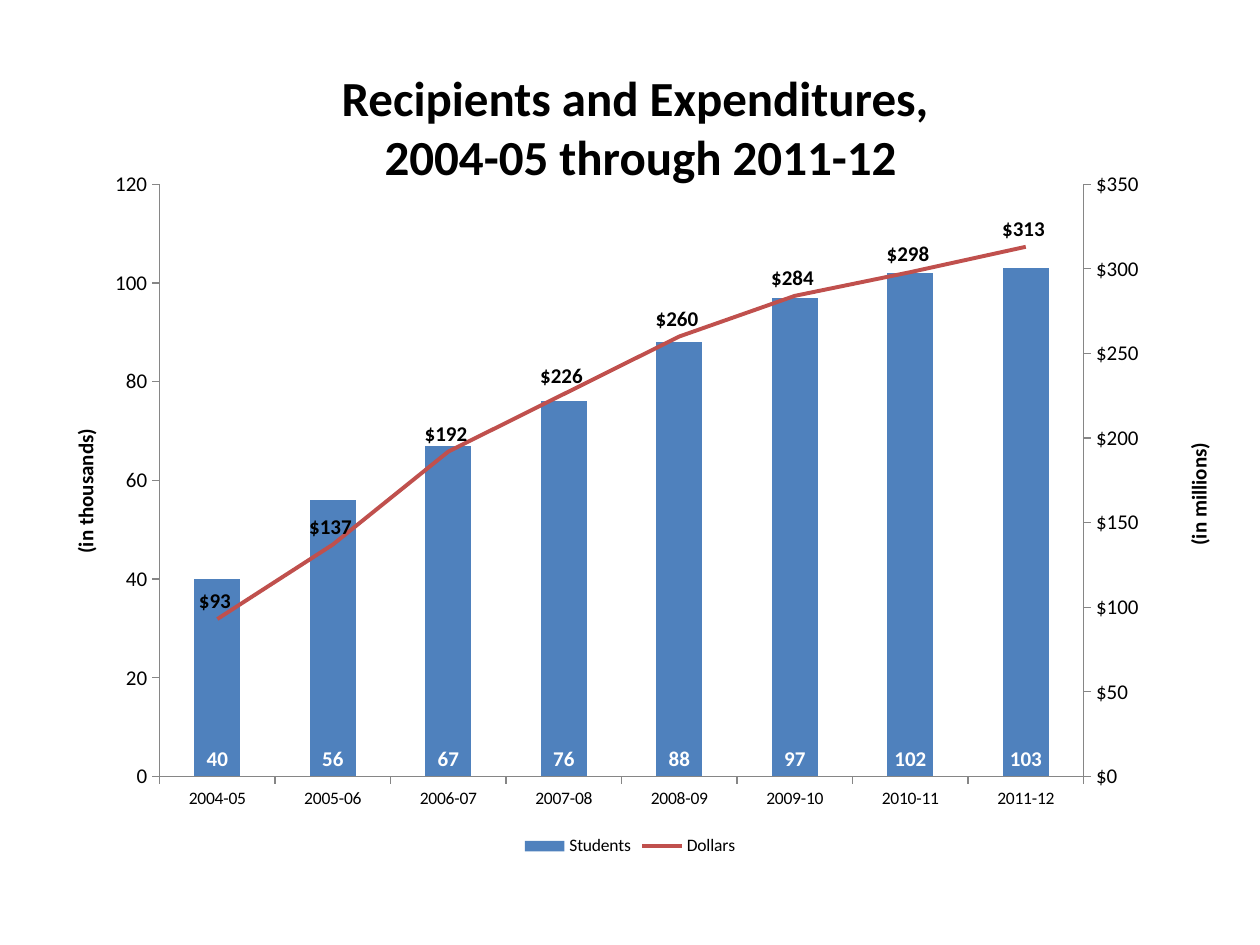
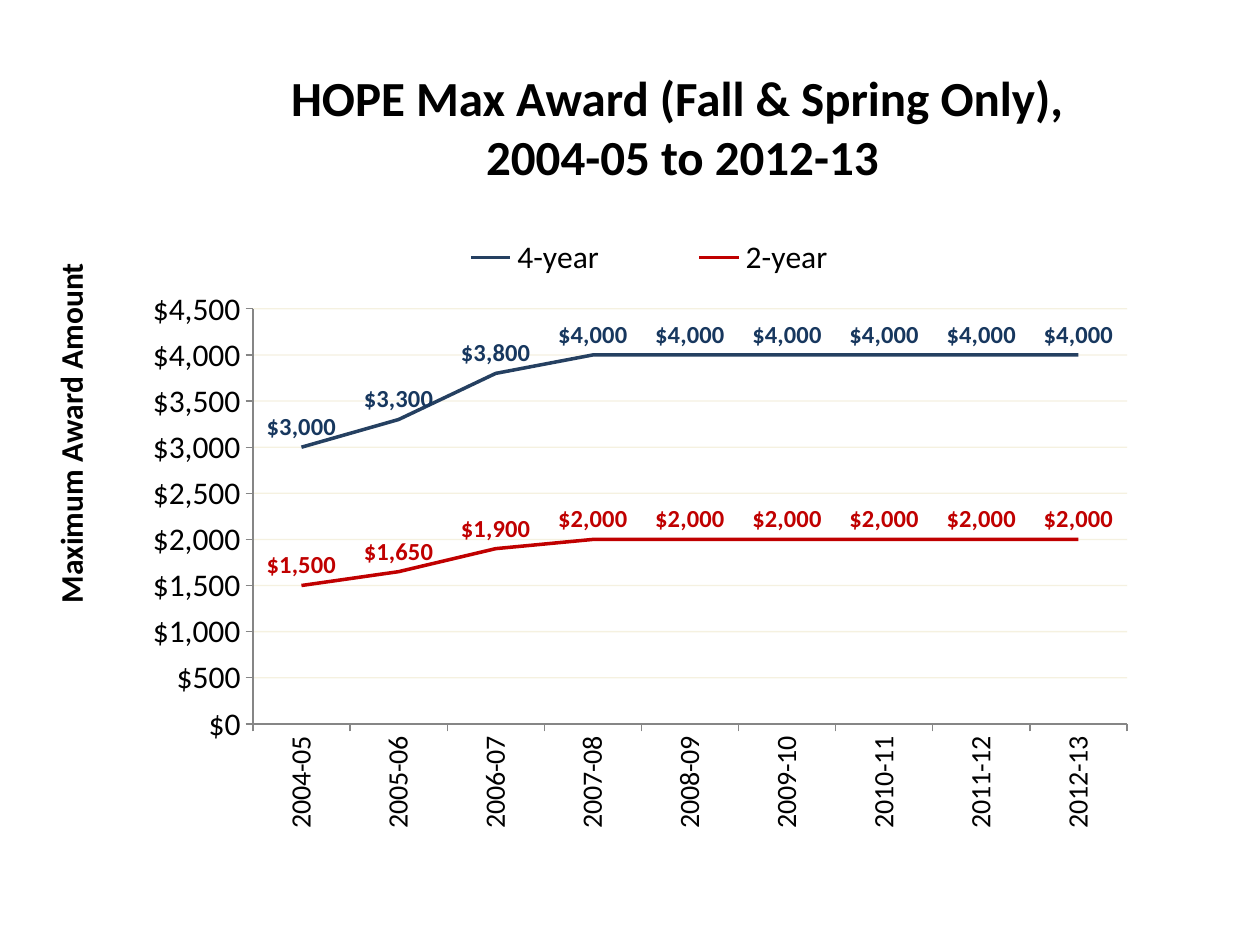
import dataclasses
from typing import Any, Optional

import lxml.etree
import pptx
import pptx.chart.axis
import pptx.chart.data
import pptx.dml.color
import pptx.enum.chart
import pptx.enum.text
import pptx.oxml
import pptx.oxml.ns
import pptx.util

EMU_PER_PX = 9525  # 96 px to the inch
VERTICAL = "-5400000"
DOLLAR_FORMAT = '"$"#,##0'
COUNT_FORMAT = "#,##0"
ChartType = pptx.enum.chart.XL_CHART_TYPE
LabelPosition = pptx.enum.chart.XL_LABEL_POSITION
LegendPosition = pptx.enum.chart.XL_LEGEND_POSITION


@dataclasses.dataclass(frozen=True)
class Theme:
    font: str = "Calibri"
    background: str = "FFFFFF"
    text: str = "000000"
    axis: str = "868686"
    grid: str = "CEB966"
    grid_opacity: int = 20
    students: str = "4F81BD"
    dollars: str = "C0504D"
    four_year: str = "254061"
    four_year_label: str = "17375E"
    two_year: str = "C00000"
    title_size: int = 28
    hairline: float = 0.75


THEME = Theme()


# What the slides are made of
@dataclasses.dataclass(frozen=True)
class Box:
    left: int
    top: int
    width: int
    height: int

    def emu(self) -> list[int]:
        return [px * EMU_PER_PX for px in dataclasses.astuple(self)]


@dataclasses.dataclass(frozen=True)
class Layout:
    """Place inside a chart, as fractions of its frame."""
    x: float
    y: float
    w: Optional[float] = None
    h: Optional[float] = None


@dataclasses.dataclass(frozen=True)
class Series:
    name: str
    values: tuple[int, ...]
    color: str
    label_color: str
    label_size: int
    label_format: str
    label_position: Any = LabelPosition.ABOVE
    line_width: float = 2


@dataclasses.dataclass(frozen=True)
class Axis:
    title: str
    title_layout: Layout
    maximum: int
    step: int
    number_format: str
    size: int


@dataclasses.dataclass(frozen=True)
class ChartPlan:
    box: Box
    kind: Any
    first_year: int
    series: tuple[Series, ...]
    axis: Axis
    plot_layout: Layout
    legend_position: Any
    text_size: int
    category_size: int
    legend_layout: Optional[Layout] = None
    right_axis: Optional[Axis] = None  # carries the last series as a line
    vertical_categories: bool = False
    gridlines: bool = False


@dataclasses.dataclass(frozen=True)
class SlidePlan:
    title: str
    title_box: Box
    chart: ChartPlan


# Small helpers
def rgb(color: str) -> pptx.dml.color.RGBColor:
    return pptx.dml.color.RGBColor.from_string(color)


def style_font(font: Any, size: int, color: str = THEME.text, bold: bool = False) -> None:
    font.name = THEME.font
    font.size = pptx.util.Pt(size)
    font.bold = bold
    font.color.rgb = rgb(color)


def style_line(line: Any, color: str, width: float) -> None:
    line.color.rgb = rgb(color)
    line.width = pptx.util.Pt(width)


def turn_text(element: Any) -> None:
    for body in element.xpath(".//a:bodyPr"):
        body.set("rot", VERTICAL)
        body.set("vert", "horz")


def set_layout(element: Any, layout: Layout, inner: bool = False) -> None:
    for old in element.xpath("c:layout"):
        element.remove(old)
    target = '<c:layoutTarget val="inner"/>' if inner else ""
    modes = '<c:xMode val="edge"/><c:yMode val="edge"/>'
    values = "".join(f'<c:{name} val="{value}"/>'
                     for name, value in dataclasses.asdict(layout).items() if value is not None)
    node = pptx.oxml.parse_xml(
        f'<c:layout {pptx.oxml.ns.nsdecls("c")}><c:manualLayout>'
        f"{target}{modes}{values}</c:manualLayout></c:layout>")
    before = element.xpath("c:tx|c:legendPos")
    if before:
        before[0].addnext(node)
    else:
        element.insert(0, node)


# Chart parts
def style_value_axis(value_axis: Any, plan: Axis, gridlines: bool) -> None:
    value_axis.minimum_scale = 0
    value_axis.maximum_scale = plan.maximum
    value_axis.major_unit = plan.step
    value_axis.major_tick_mark = pptx.enum.chart.XL_TICK_MARK.OUTSIDE
    value_axis.tick_labels.number_format = plan.number_format
    value_axis.tick_labels.number_format_is_linked = False
    style_font(value_axis.tick_labels.font, plan.size)
    style_line(value_axis.format.line, THEME.axis, THEME.hairline)
    value_axis.has_major_gridlines = gridlines
    if gridlines:
        line = value_axis.major_gridlines.format.line
        style_line(line, THEME.grid, THEME.hairline)
        color = value_axis.major_gridlines._xAx.xpath("c:majorGridlines//a:srgbClr")[0]
        alpha = lxml.etree.SubElement(color, pptx.oxml.ns.qn("a:alpha"))
        alpha.set("val", str(THEME.grid_opacity * 1000))
    title = value_axis.axis_title
    title.text_frame.text = plan.title
    style_font(title.text_frame.paragraphs[0].runs[0].font, plan.size, bold=True)
    turn_text(title._element)
    set_layout(title._element, plan.title_layout)


def style_category_axis(category_axis: Any, size: int, vertical: bool) -> None:
    category_axis.major_tick_mark = pptx.enum.chart.XL_TICK_MARK.OUTSIDE
    category_axis.has_major_gridlines = False
    style_font(category_axis.tick_labels.font, size)
    style_line(category_axis.format.line, THEME.axis, THEME.hairline)
    if vertical:
        turn_text(category_axis._element.xpath("c:txPr")[0])


def style_series(series: Any, plan: Series) -> None:
    if isinstance(series, pptx.chart.series.LineSeries):
        series.smooth = False
        series.marker.style = pptx.enum.chart.XL_MARKER_STYLE.NONE
        style_line(series.format.line, plan.color, plan.line_width)
    else:
        series.format.fill.solid()
        series.format.fill.fore_color.rgb = rgb(plan.color)
    labels = series.data_labels
    labels.show_value = True
    labels.number_format = plan.label_format
    labels.number_format_is_linked = False
    labels.position = plan.label_position
    style_font(labels.font, plan.label_size, plan.label_color, bold=True)


def move_last_series_to_right_axis(chart: Any) -> Any:
    """Turn the last column series into a line and return its new value axis."""
    plot_area = chart._chartSpace.xpath("c:chart/c:plotArea")[0]
    columns = plot_area.xpath("c:barChart")[0]
    series = columns.xpath("c:ser")[-1]
    for node in series.xpath("c:invertIfNegative"):
        series.remove(node)
    category_id, value_id = "50010", "50020"

    def axis_xml(tag: str, own: str, other: str, hidden: int, side: str, crosses: str) -> str:
        return (f'<c:{tag}><c:axId val="{own}"/><c:scaling><c:orientation val="minMax"/></c:scaling>'
                f'<c:delete val="{hidden}"/><c:axPos val="{side}"/><c:majorTickMark val="out"/>'
                f'<c:minorTickMark val="none"/><c:tickLblPos val="nextTo"/>'
                f'<c:crossAx val="{other}"/><c:crosses val="{crosses}"/></c:{tag}>')

    parts = pptx.oxml.parse_xml(
        f'<c:plotArea {pptx.oxml.ns.nsdecls("c", "a")}>'
        '<c:lineChart><c:grouping val="standard"/><c:varyColors val="0"/><c:marker val="1"/>'
        f'<c:axId val="{category_id}"/><c:axId val="{value_id}"/></c:lineChart>'
        + axis_xml("valAx", value_id, category_id, 0, "r", "max")
        + axis_xml("catAx", category_id, value_id, 1, "b", "autoZero")
        + "</c:plotArea>")
    line_chart, value_axis, category_axis = list(parts)
    line_chart.insert(2, series)
    columns.addnext(line_chart)
    last_axis = plot_area.xpath("c:catAx|c:valAx")[-1]
    last_axis.addnext(value_axis)
    value_axis.addnext(category_axis)
    return pptx.chart.axis.ValueAxis(value_axis)


def add_chart(slide: Any, plan: ChartPlan) -> None:
    data = pptx.chart.data.CategoryChartData()
    years = range(plan.first_year, plan.first_year + len(plan.series[0].values))
    data.categories = [f"{year}-{(year + 1) % 100:02d}" for year in years]
    for series in plan.series:
        data.add_series(series.name, series.values)
    chart = slide.shapes.add_chart(plan.kind, *plan.box.emu(), data).chart
    chart.has_title = False
    style_font(chart.font, plan.text_size)
    style_category_axis(chart.category_axis, plan.category_size, plan.vertical_categories)
    style_value_axis(chart.value_axis, plan.axis, plan.gridlines)
    if plan.right_axis:
        style_value_axis(move_last_series_to_right_axis(chart), plan.right_axis, False)
    for plot in chart.plots:
        plot.vary_by_categories = False
    if plan.kind == ChartType.COLUMN_CLUSTERED:
        chart.plots[0].gap_width = 150
    drawn = [series for plot in chart.plots for series in plot.series]
    for series, series_plan in zip(drawn, plan.series):
        style_series(series, series_plan)
    chart.has_legend = True
    chart.legend.position = plan.legend_position
    chart.legend.include_in_layout = False
    style_font(chart.legend.font, plan.text_size)
    if plan.legend_layout:
        set_layout(chart.legend._element, plan.legend_layout)
    set_layout(chart._chartSpace.xpath("c:chart/c:plotArea")[0], plan.plot_layout, inner=True)


def add_title(slide: Any, text: str, box: Box) -> None:
    text_frame = slide.shapes.add_textbox(*box.emu()).text_frame
    text_frame.word_wrap = True
    text_frame.vertical_anchor = pptx.enum.text.MSO_ANCHOR.MIDDLE
    text_frame.text = text
    for paragraph in text_frame.paragraphs:
        paragraph.alignment = pptx.enum.text.PP_ALIGN.CENTER
        style_font(paragraph.runs[0].font, THEME.title_size, bold=True)


# Content
RECIPIENTS = SlidePlan(
    "Recipients and Expenditures, \n2004-05 through 2011-12", Box(80, 40, 816, 112),
    ChartPlan(
        Box(24, 120, 912, 536), ChartType.COLUMN_CLUSTERED, 2004,
        (Series("Students", (40, 56, 67, 76, 88, 97, 102, 103), THEME.students, THEME.background,
                12, COUNT_FORMAT, LabelPosition.INSIDE_BASE),
         Series("Dollars", (93, 137, 192, 226, 260, 284, 298, 313), THEME.dollars, THEME.text,
                12, DOLLAR_FORMAT + r'_);[Red]\("$"#,##0\)', line_width=2.25)),
        Axis("(in thousands)", Layout(0.03, 0.38), 120, 20, COUNT_FORMAT, 12),
        Layout(0.107, 0.038, 0.772, 0.842), LegendPosition.BOTTOM,
        text_size=10, category_size=10,
        right_axis=Axis("(in millions)", Layout(0.96, 0.4), 350, 50, DOLLAR_FORMAT, 12)))

MAX_AWARD = SlidePlan(
    "HOPE Max Award (Fall & Spring Only), \n2004-05 to 2012-13", Box(112, 40, 816, 112),
    ChartPlan(
        Box(24, 152, 888, 552), ChartType.LINE, 2004,
        (Series("4-year", (3000, 3300, 3800) + (4000,) * 6, THEME.four_year,
                THEME.four_year_label, 14, DOLLAR_FORMAT),
         Series("2-year", (1500, 1650, 1900) + (2000,) * 6, THEME.two_year,
                THEME.two_year, 14, DOLLAR_FORMAT)),
        Axis("Maximum Award Amount", Layout(0.01, 0.08), 4500, 500, DOLLAR_FORMAT, 18),
        Layout(0.19, 0.151, 0.75, 0.573), LegendPosition.TOP,
        text_size=18, category_size=16, legend_layout=Layout(0.3, 0.03, 0.46, 0.1),
        vertical_categories=True, gridlines=True))


def main() -> None:
    presentation = pptx.Presentation()
    presentation.slide_width, presentation.slide_height = Box(0, 0, 960, 720).emu()[2:]
    for plan in (RECIPIENTS, MAX_AWARD):
        slide = presentation.slides.add_slide(presentation.slide_layouts[6])
        add_chart(slide, plan.chart)
        add_title(slide, plan.title, plan.title_box)
    presentation.save("out.pptx")


if __name__ == "__main__":
    main()
